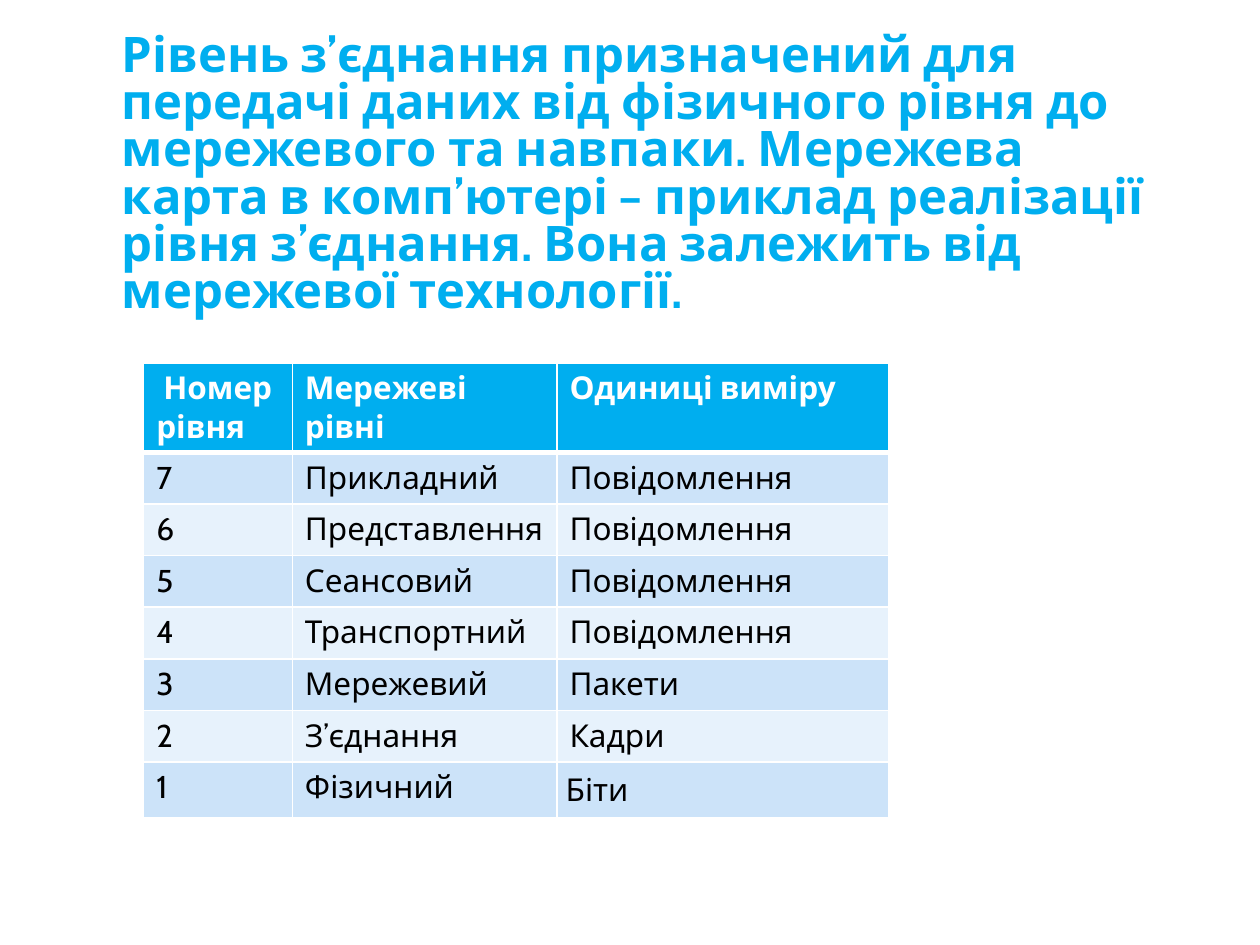
from lxml.etree import SubElement
from pptx import Presentation
from pptx.dml.color import RGBColor
from pptx.enum.text import MSO_ANCHOR
from pptx.oxml.ns import qn
from pptx.util import Inches, Pt

WIDTH, HEIGHT = 10, 7.5
FONT = "Cabin"
COLORS = {
    "accent": "00AEEF",
    "white": "FFFFFF",
    "black": "000000",
    "dark": "CCE3F9",
    "light": "E7F2FC",
}
TITLE = (
    "Рівень з’єднання призначений для передачі даних від фізичного рівня "
    "до мережевого та навпаки. Мережева карта в комп’ютері – приклад "
    "реалізації рівня з’єднання. Вона залежить від мережевої технології."
)
HEADS = (" Номер рівня", "Мережеві рівні", "Одиниці виміру")
LAYERS = (
    ("7", "Прикладний", "Повідомлення"),
    ("6", "Представлення", "Повідомлення"),
    ("5", "Сеансовий", "Повідомлення"),
    ("4", "Транспортний", "Повідомлення"),
    ("3", "Мережевий", "Пакети"),
    ("2", "З’єднання", "Кадри"),
    ("1", "Фізичний", "Біти"),
)
COLS = (1.18, 2.1, 2.63)
HEAD, ROW = 0.71, 0.41


def color(name):
    """Return the named colour."""
    return RGBColor.from_string(COLORS[name])


def style(para, size, tone, bold):
    """Set the font of a paragraph."""
    font = para.font
    font.name, font.size, font.bold = FONT, Pt(size), bold
    font.color.rgb = color(tone)


def border(cell, base):
    """Draw white edges round a cell, the bottom one of the given width."""
    props = cell._tc.get_or_add_tcPr()
    for index, (tag, width) in enumerate(
        (("a:lnL", 1), ("a:lnR", 1), ("a:lnT", 1), ("a:lnB", base))
    ):
        line = props.makeelement(qn(tag), {"w": str(Pt(width))})
        fill = SubElement(line, qn("a:solidFill"))
        SubElement(fill, qn("a:srgbClr"), val=COLORS["white"])
        props.insert(index, line)


def add_title(slide, box):
    """Place the heading at the foot of its box."""
    frame = slide.shapes.add_textbox(*map(Inches, box)).text_frame
    frame.word_wrap = True
    frame.vertical_anchor = MSO_ANCHOR.BOTTOM
    para = frame.paragraphs[0]
    para.text = TITLE
    para.line_spacing = 0.8
    style(para, 28, "accent", True)


def add_layers(slide, box):
    """Place the table of network layers in its box."""
    rows = (HEADS, *LAYERS)
    table = slide.shapes.add_table(len(rows), len(COLS), *map(Inches, box)).table
    for col, width in zip(table.columns, COLS):
        col.width = Inches(width)
    for r, texts in enumerate(rows):
        head = r == 0
        table.rows[r].height = Inches(HEAD if head else ROW)
        fill = "accent" if head else ("light", "dark")[r % 2]
        for c, text in enumerate(texts):
            cell = table.cell(r, c)
            cell.text = text
            cell.fill.solid()
            cell.fill.fore_color.rgb = color(fill)
            border(cell, 3 if head else 1)
            para = cell.text_frame.paragraphs[0]
            style(para, 18, "white" if head else "black", head)
    cell.vertical_anchor = MSO_ANCHOR.MIDDLE
    cell.margin_left = cell.margin_right = Inches(0.07)
    cell.margin_top = cell.margin_bottom = Inches(0.07)


def main():
    """Build and save the slide."""
    deck = Presentation()
    deck.slide_width, deck.slide_height = Inches(WIDTH), Inches(HEIGHT)
    slide = deck.slides.add_slide(deck.slide_layouts[6])
    add_title(slide, (0.87, 0.58, 8.54, 1.99))
    add_layers(slide, (1.14, 2.88, sum(COLS), HEAD + ROW * len(LAYERS)))
    deck.save("out.pptx")


if __name__ == "__main__":
    main()
